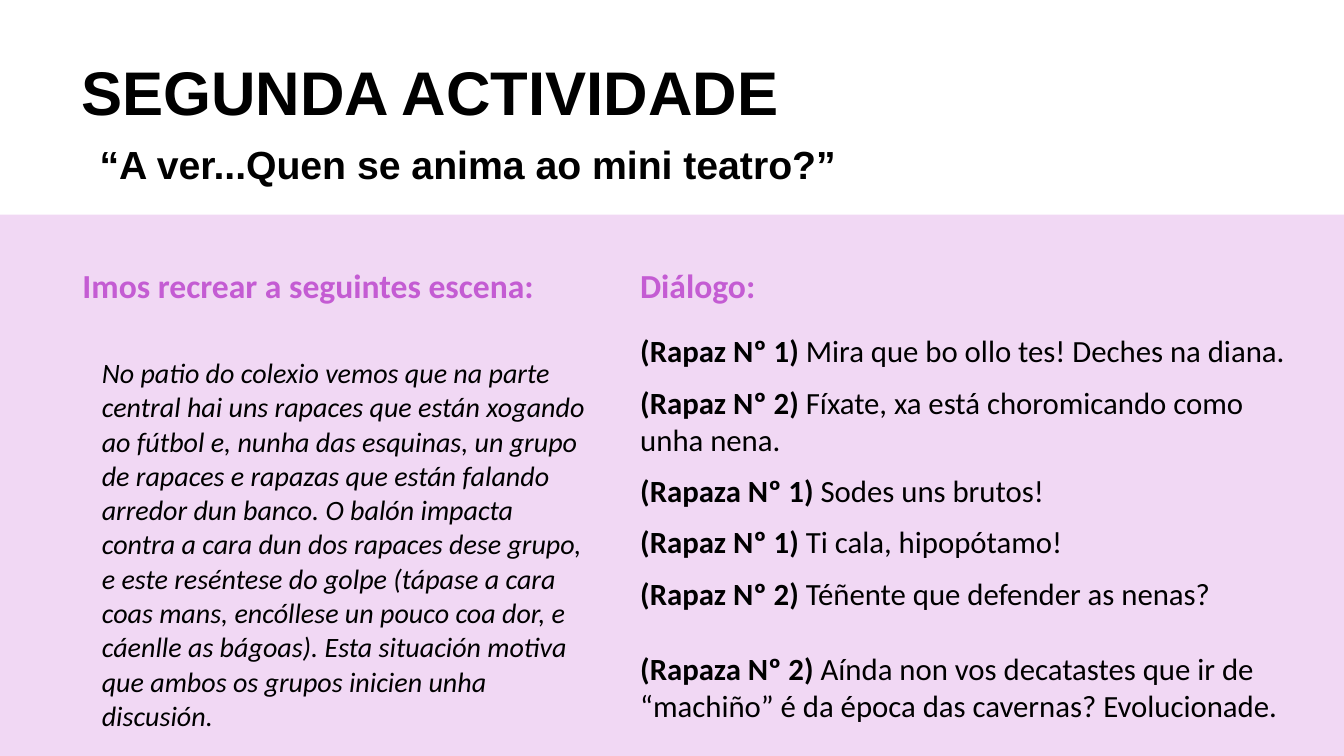
"""Build the slide for the second activity: a scene and its dialogue."""
from pptx import Presentation
from pptx.dml.color import RGBColor
from pptx.enum.shapes import MSO_SHAPE
from pptx.enum.text import MSO_ANCHOR
from pptx.oxml.ns import qn
from pptx.util import Inches, Pt

BLACK = RGBColor(0x00, 0x00, 0x00)
LILAC = RGBColor(0xF1, 0xD8, 0xF4)
ORCHID = RGBColor(0xC4, 0x5C, 0xD3)
NO_STYLE = "{2D5ABB26-0587-4C30-8999-92F81FD0307C}"

SCENE = (
    "No patio do colexio vemos que na parte central hai uns rapaces que están "
    "xogando ao fútbol e, nunha das esquinas, un grupo de rapaces e rapazas que "
    "están falando arredor dun banco. O balón impacta contra a cara dun dos "
    "rapaces dese grupo, e este reséntese do golpe (tápase a cara coas mans, "
    "encóllese un pouco coa dor, e cáenlle as bágoas). Esta situación motiva que "
    "ambos os grupos inicien unha discusión."
)
DIALOGUE = [
    ("(Rapaz Nº 1) ", "Mira que bo ollo tes! Deches na diana.", 0),
    ("(Rapaz Nº 2) ", "Fíxate, xa está choromicando como unha nena.", 9.8),
    ("(Rapaza Nº 1) ", "Sodes uns brutos!", 9.8),
    ("(Rapaz Nº 1) ", "Ti cala, hipopótamo!", 9.8),
    ("(Rapaz Nº 2) ", "Téñente que defender as nenas?", 9.8),
    ("(Rapaza Nº 2) ", "Aínda non vos decatastes que ir de “machiño” é da época "
     "das cavernas? Evolucionade.", 26.9),
]


def add_run(p, text, size, font="Calibri", color=BLACK, bold=False, italic=False):
    r = p.add_run()
    r.text = text
    r.font.size = Pt(size)
    r.font.name = font
    r.font.color.rgb = color
    r.font.bold = bold
    r.font.italic = italic


def add_cell(slide, left, top, width, height):
    frame = slide.shapes.add_table(
        1, 1, Inches(left), Inches(top), Inches(width), Inches(height))
    table = frame.table
    table.first_row = False
    table.horz_banding = False
    next(frame.element.iter(qn("a:tableStyleId"))).text = NO_STYLE
    cell = table.cell(0, 0)
    cell.fill.background()
    return cell.text_frame


prs = Presentation()
prs.slide_width = Inches(13.33)
prs.slide_height = Inches(7.5)
slide = prs.slides.add_slide(prs.slide_layouts[6])

panel = slide.shapes.add_shape(
    MSO_SHAPE.RECTANGLE, 0, Inches(2.13), Inches(13.33), Inches(5.37))
panel.shadow.inherit = False
panel.fill.solid()
panel.fill.fore_color.rgb = LILAC
panel.line.fill.background()

headings = [
    ("SEGUNDA ACTIVIDADE", 0.71, 0.32, 11.5, 1.25, 44, "Arial", BLACK, 0.9),
    ("“A ver...Quen se anima ao mini teatro?”",
     0.89, 1.4, 7.94, 0.53, 28, "Arial", BLACK, 0.9),
    ("Imos recrear a seguintes escena:",
     0.72, 2.55, 5.34, 0.51, 24, "Calibri", ORCHID, 1.07),
    ("Diálogo:", 6.25, 2.55, 5.34, 0.51, 24, "Calibri", ORCHID, 1.07),
]
for text, left, top, width, height, size, font, color, spacing in headings:
    sp = slide.shapes.add_textbox(
        Inches(left), Inches(top), Inches(width), Inches(height))
    tf = sp.text_frame
    tf.word_wrap = True
    tf.vertical_anchor = MSO_ANCHOR.MIDDLE if size == 44 else MSO_ANCHOR.TOP
    p = tf.paragraphs[0]
    p.line_spacing = spacing
    add_run(p, text, size, font, color, bold=True)

tf = add_cell(slide, 0.81, 3.49, 5.15, 4.01)
p = tf.paragraphs[0]
p._p.get_or_add_pPr().set("marL", str(Inches(0.1)))
add_run(p, SCENE, 20, italic=True)

tf = add_cell(slide, 6.25, 3.26, 6.67, 4.1)
for i, (speaker, line, gap) in enumerate(DIALOGUE):
    p = tf.add_paragraph() if i else tf.paragraphs[0]
    p.space_before = Pt(gap)
    add_run(p, speaker, 22, bold=True)
    add_run(p, line, 22)

prs.save("out.pptx")
